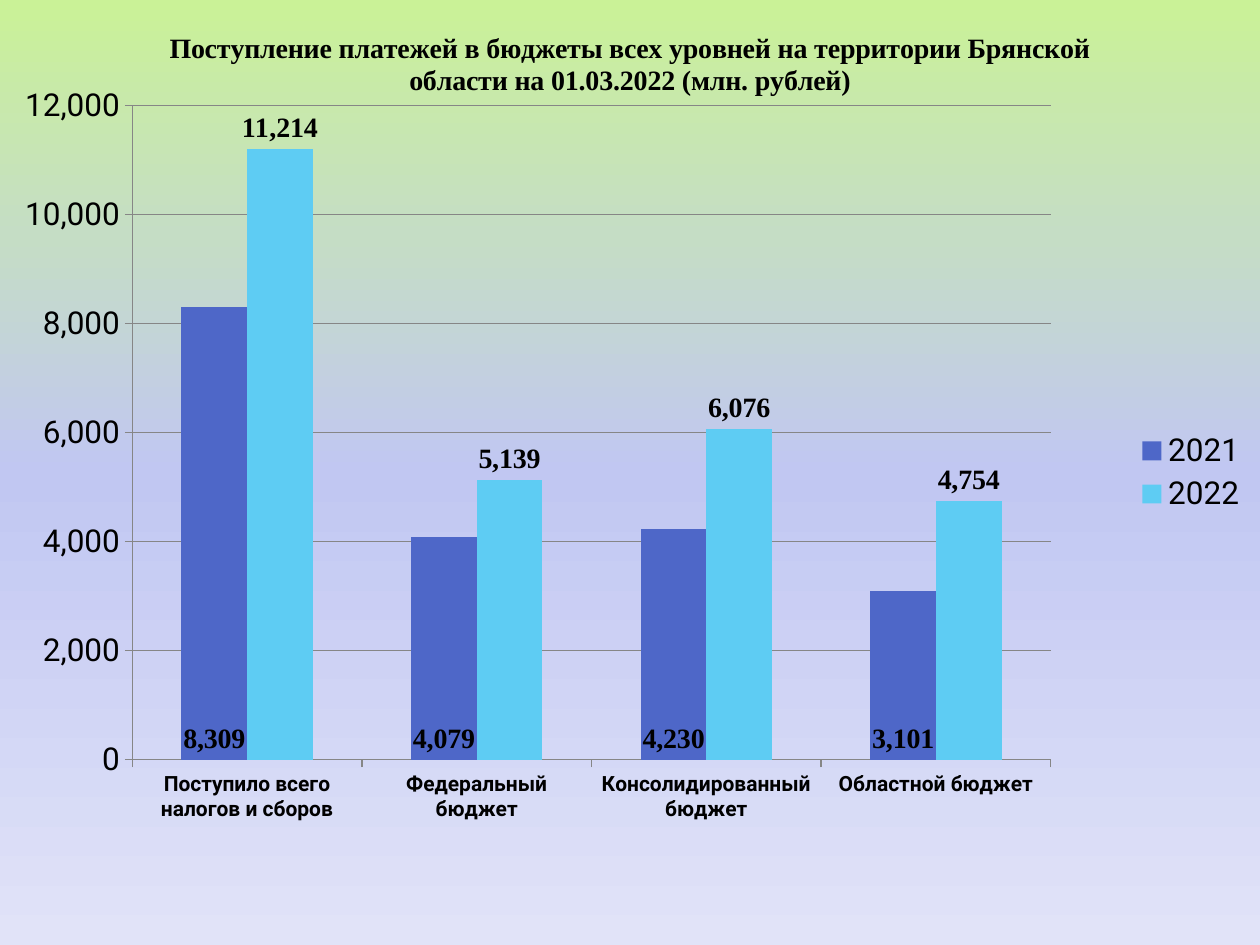
from lxml import etree
from pptx import Presentation
from pptx import util as u
from pptx.chart.data import CategoryChartData
from pptx.dml.color import RGBColor
from pptx.enum import chart as kinds
from pptx.oxml import parse_xml
from pptx.oxml.ns import nsdecls, qn

BLACK = RGBColor(0x00, 0x00, 0x00)
GRAY = RGBColor(0x86, 0x86, 0x86)
BLUE = RGBColor(0x4E, 0x67, 0xC8)
CYAN = RGBColor(0x5E, 0xCC, 0xF3)
BACKDROP = [
    (0, RGBColor(0xCA, 0xF2, 0x97)),
    (25, RGBColor(0xC5, 0xDD, 0xC5)),
    (50, RGBColor(0xC1, 0xC7, 0xF2)),
    (100, RGBColor(0xE1, 0xE3, 0xF8)),
]
SANS, SERIF = "Roboto", "Times New Roman"
NUMBERS = "#,##0"

TITLE = ("Поступление платежей в бюджеты всех уровней на территории "
         "Брянской области на 01.03.2022 (млн. рублей)")
BUDGETS = ["Поступило всего налогов и сборов", "Федеральный бюджет",
           "Консолидированный бюджет", "Областной бюджет"]
LABEL_PLACE = kinds.XL_LABEL_POSITION
YEARS = [
    ("2021", (8309, 4079, 4230, 3101), BLUE, LABEL_PLACE.INSIDE_BASE),
    ("2022", (11214, 5139, 6076, 4754), CYAN, LABEL_PLACE.OUTSIDE_END),
]


def set_font(font, name, size, bold):
    font.name, font.size, font.bold = name, u.Pt(size), bold
    font.color.rgb = BLACK


def fill_chart_area(chart, stops):
    """Give the whole chart a gradient running from top to bottom."""
    marks = "".join(
        f'<a:gs pos="{place * 1000}"><a:srgbClr val="{color}"/></a:gs>'
        for place, color in stops)
    area = parse_xml(
        f'<c:spPr {nsdecls("c", "a")}><a:gradFill><a:gsLst>{marks}</a:gsLst>'
        '<a:lin ang="5400000" scaled="0"/></a:gradFill>'
        '<a:ln><a:noFill/></a:ln></c:spPr>')
    chart.element.find(qn("c:chart")).addnext(area)


def place_plot(chart, x, y, w, h):
    """Fix the inner plot area, in fractions of the chart."""
    plot_area = chart.element.find(qn("c:chart")).find(qn("c:plotArea"))
    for old in plot_area.findall(qn("c:layout")):
        plot_area.remove(old)
    layout = parse_xml(f'<c:layout {nsdecls("c")}><c:manualLayout/></c:layout>')
    settings = [("layoutTarget", "inner"), ("xMode", "edge"), ("yMode", "edge"),
                ("x", x), ("y", y), ("w", w), ("h", h)]
    for tag, value in settings:
        etree.SubElement(layout[0], qn(f"c:{tag}")).set("val", str(value))
    plot_area.insert(0, layout)


def style_axes(chart):
    for axis, size, bold in ((chart.category_axis, 12, True),
                             (chart.value_axis, 18, False)):
        axis.major_tick_mark = kinds.XL_TICK_MARK.OUTSIDE
        axis.minor_tick_mark = kinds.XL_TICK_MARK.NONE
        axis.format.line.color.rgb = GRAY
        axis.format.line.width = u.Pt(0.75)
        set_font(axis.tick_labels.font, SANS, size, bold)
    values = chart.value_axis
    values.minimum_scale, values.maximum_scale = 0, 12000
    values.major_unit = 2000
    values.tick_labels.number_format = NUMBERS
    values.tick_labels.number_format_is_linked = False
    values.has_major_gridlines = True
    values.major_gridlines.format.line.color.rgb = GRAY
    values.major_gridlines.format.line.width = u.Pt(0.75)


def style_columns(plot):
    plot.gap_width, plot.overlap = 150, 0
    plot.vary_by_categories = False
    for series, (_, _, color, place) in zip(plot.series, YEARS):
        series.format.fill.solid()
        series.format.fill.fore_color.rgb = color
        series.invert_if_negative = False
        labels = series.data_labels
        labels.show_value = True
        labels.position = place
        labels.number_format = NUMBERS
        labels.number_format_is_linked = False
        set_font(labels.font, SERIF, 16, True)


def add_budget_chart(page, left, top, width, height):
    data = CategoryChartData(number_format=NUMBERS)
    data.categories = BUDGETS
    for name, values, _, _ in YEARS:
        data.add_series(name, values)
    chart = page.shapes.add_chart(kinds.XL_CHART_TYPE.COLUMN_CLUSTERED,
                                  left, top, width, height, data).chart
    set_font(chart.font, SANS, 18, False)

    chart.has_title = True
    para = chart.chart_title.text_frame.paragraphs[0]
    para.text = TITLE
    set_font(para.runs[0].font, SERIF, 16, True)
    chart.chart_title.include_text_frame = True

    chart.has_legend = True
    chart.legend.position = kinds.XL_LEGEND_POSITION.RIGHT
    chart.legend.include_in_layout = False
    set_font(chart.legend.font, SANS, 18, False)

    style_axes(chart)
    style_columns(chart.plots[0])
    place_plot(chart, 0.105, 0.112, 0.729, 0.692)
    fill_chart_area(chart, BACKDROP)


def main():
    deck = Presentation()
    deck.slide_width, deck.slide_height = u.Inches(10), u.Inches(7.5)
    page = deck.slides.add_slide(deck.slide_layouts[6])
    add_budget_chart(page, u.Inches(0), u.Inches(0), u.Inches(10), u.Inches(7.5))
    deck.save("out.pptx")


if __name__ == "__main__":
    main()
